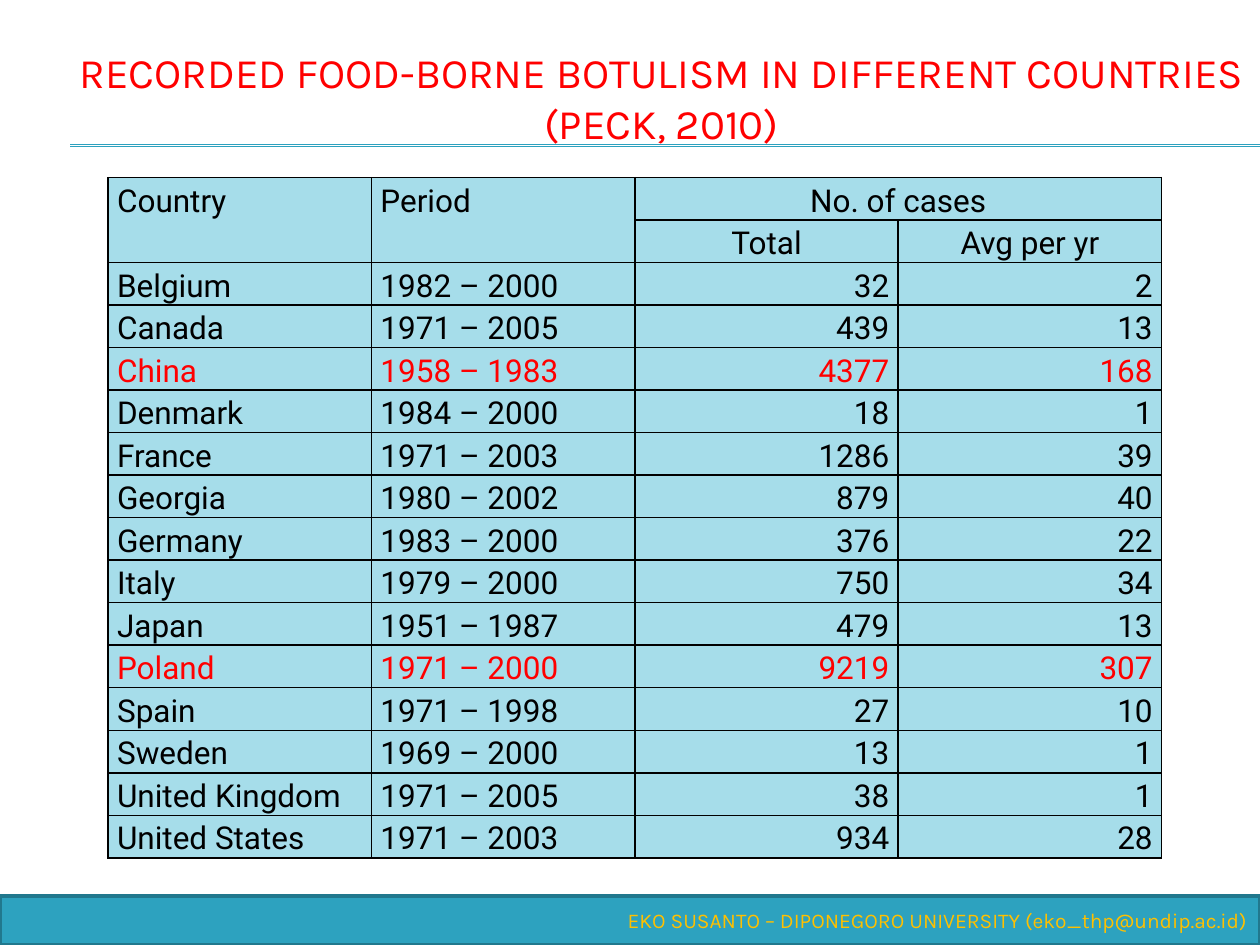
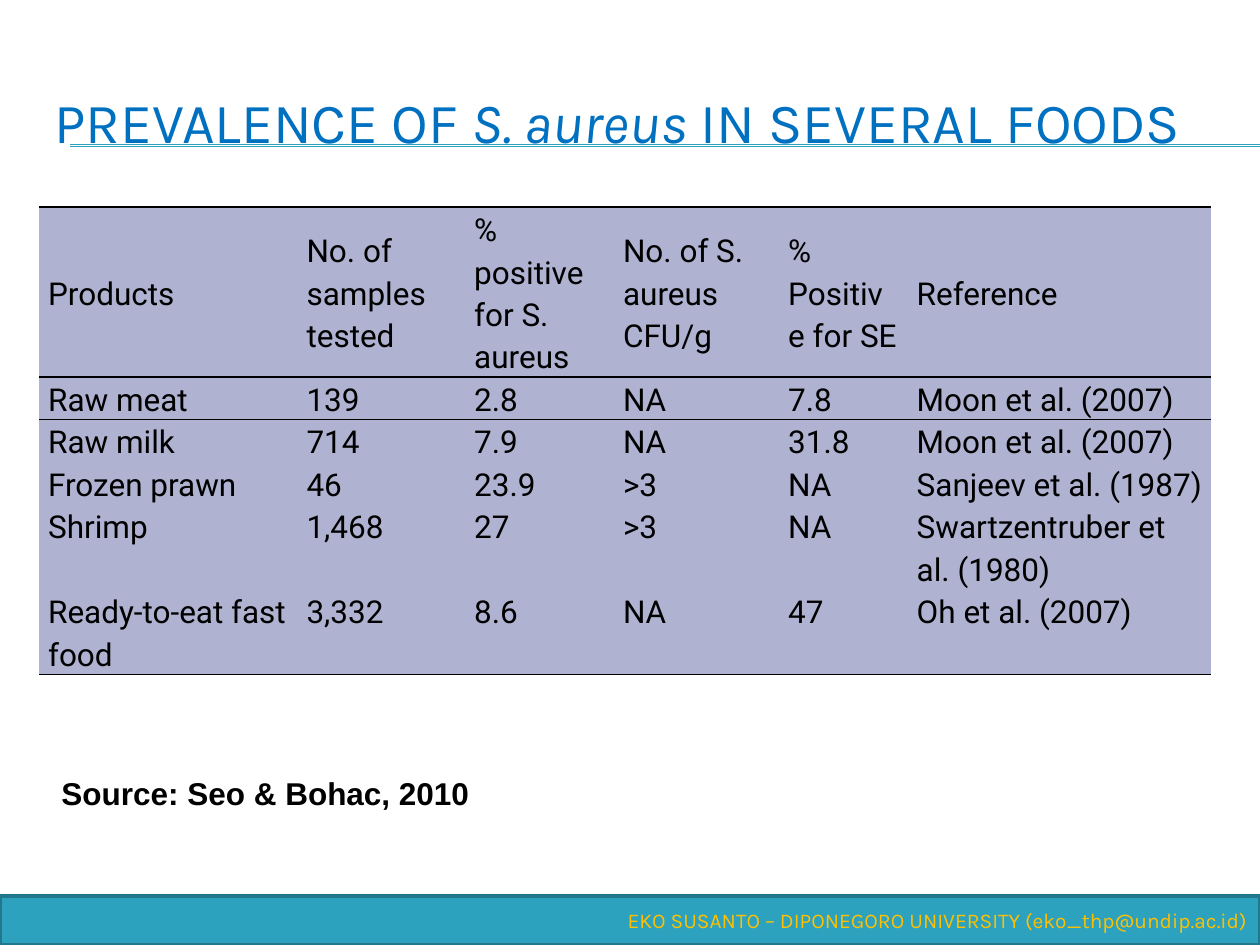
from lxml.etree import SubElement
from pptx import Presentation
from pptx.dml.color import RGBColor
from pptx.enum.shapes import MSO_CONNECTOR, MSO_SHAPE
from pptx.enum.text import MSO_ANCHOR as Anchor, MSO_AUTO_SIZE as AutoSize, PP_ALIGN as Align
from pptx.oxml.ns import qn
from pptx.util import Cm, Pt

BLACK = RGBColor(0x00, 0x00, 0x00)
RED = RGBColor(0xFF, 0x00, 0x00)
BLUE = RGBColor(0x00, 0x70, 0xC0)
GOLD = RGBColor(0xFF, 0xC0, 0x00)
TEAL = RGBColor(0x2D, 0xA2, 0xBF)
DARK_TEAL = RGBColor(0x21, 0x78, 0x8D)
PALE_TEAL = RGBColor(0xA6, 0xDD, 0xEA)
LAVENDER = RGBColor(0xAF, 0xB2, 0xD0)

TITLE_FONT, TABLE_FONT, SOURCE_FONT = "Karla", "Roboto", "Arial"
PLAIN_TABLE_STYLE = "{2D5ABB26-0587-4C30-8999-92F81FD0307C}"
LINE_HEIGHT = 0.85
FOOTER = "EKO SUSANTO – DIPONEGORO UNIVERSITY (eko_thp@undip.ac.id)"

BOTULISM_CASES = [
    ("Belgium", "1982 – 2000", "32", "2"),
    ("Canada", "1971 – 2005", "439", "13"),
    ("China", "1958 – 1983", "4377", "168"),
    ("Denmark", "1984 – 2000", "18", "1"),
    ("France", "1971 – 2003", "1286", "39"),
    ("Georgia", "1980 – 2002", "879", "40"),
    ("Germany", "1983 – 2000", "376", "22"),
    ("Italy", "1979 – 2000", "750", "34"),
    ("Japan", "1951 – 1987", "479", "13"),
    ("Poland", "1971 – 2000", "9219", "307"),
    ("Spain", "1971 – 1998", "27", "10"),
    ("Sweden", "1969 – 2000", "13", "1"),
    ("United Kingdom", "1971 – 2005", "38", "1"),
    ("United States", "1971 – 2003", "934", "28"),
]
HIGHLIGHTED = {"China", "Poland"}

AUREUS_ROWS = [
    ("Products", "No. of samples tested", "% positive for S. aureus",
     "No. of S. aureus CFU/g", "% Positive for SE", "Reference"),
    ("Raw meat", "139", "2.8", "NA", "7.8", "Moon et al. (2007)"),
    ("Raw milk", "714", "7.9", "NA", "31.8", "Moon et al. (2007)"),
    ("Frozen prawn", "46", "23.9", ">3", "NA", "Sanjeev et al. (1987)"),
    ("Shrimp", "1,468", "27", ">3", "NA", "Swartzentruber et al. (1980)"),
    ("Ready-to-eat fast food", "3,332", "8.6", "NA", "47", "Oh et al. (2007)"),
]


class DeckBuilder:
    def __init__(self):
        self.deck = Presentation()
        self.deck.slide_width, self.deck.slide_height = Cm(25.4), Cm(19.05)
        self.layout = self.deck.slide_layouts[5]
        self.page = None

    def add_page(self):
        self.page = self.deck.slides.add_slide(self.layout)

    def add_layout_rule(self, top):
        rule = self.page.shapes.add_connector(
            MSO_CONNECTOR.STRAIGHT, Cm(1.42), Cm(top), Cm(25.4), Cm(top))
        rule.line.color.rgb = TEAL
        rule.line.width = Pt(0.75)
        SubElement(rule._element.spPr, qn("a:effectLst"))
        self.layout.shapes._spTree.append(rule._element)

    def add_span(self, para, text, font, size, color, bold=False, italic=False):
        span = para.add_run()
        span.text = text
        span.font.name, span.font.size = font, Pt(size)
        span.font.bold, span.font.italic = bold, italic
        span.font.color.rgb = color

    def add_title(self, left, top, spans, size, color, align):
        title = self.page.shapes.title
        title.left, title.top, title.width, title.height = Cm(left), Cm(top), Cm(24.13), Cm(2.34)
        frame = title.text_frame
        frame.auto_size = AutoSize.NONE
        frame.vertical_anchor = Anchor.MIDDLE
        para = frame.paragraphs[0]
        para.alignment = align
        for text, italic in spans:
            self.add_span(para, text, TITLE_FONT, size, color, italic=italic)

    def add_table(self, left, top, column_widths, line_counts):
        heights = [LINE_HEIGHT * count for count in line_counts]
        frame = self.page.shapes.add_table(
            len(heights), len(column_widths), Cm(left), Cm(top),
            Cm(sum(column_widths)), Cm(sum(heights)))
        table = frame.table
        table.first_row = table.horz_banding = False
        table._tbl.tblPr.find(qn("a:tableStyleId")).text = PLAIN_TABLE_STYLE
        for column, width in zip(table.columns, column_widths):
            column.width = Cm(width)
        for row, height in zip(table.rows, heights):
            row.height = Cm(height)
        return table

    def format_cell(self, cell, fill, sides):
        cell.margin_left = cell.margin_right = Cm(0.18)
        cell.margin_top = cell.margin_bottom = 0
        properties = cell._tc.get_or_add_tcPr()
        for side in sides:
            border = SubElement(properties, qn(f"a:ln{side}"), w=str(Pt(1)))
            paint = SubElement(border, qn("a:solidFill"))
            SubElement(paint, qn("a:srgbClr"), val=str(BLACK))
        cell.fill.solid()
        cell.fill.fore_color.rgb = fill

    def write_cell(self, cell, text, align=Align.LEFT, color=BLACK, anchor=Anchor.TOP):
        cell.vertical_anchor = anchor
        para = cell.text_frame.paragraphs[0]
        para.alignment = align
        para.line_spacing = 1.15
        self.add_span(para, text, TABLE_FONT, 18, color)

    def add_source(self, text):
        box = self.page.shapes.add_textbox(Cm(0.99), Cm(15.47), Cm(8.81), Cm(1.02))
        frame = box.text_frame
        frame.word_wrap = False
        frame.auto_size = AutoSize.SHAPE_TO_FIT_TEXT
        self.add_span(frame.paragraphs[0], text, SOURCE_FONT, 18, BLACK, bold=True)

    def add_footer(self):
        band = self.page.shapes.add_shape(
            MSO_SHAPE.RECTANGLE, 0, Cm(18.06), Cm(25.4), Cm(0.99))
        band.shadow.inherit = False
        band.fill.solid()
        band.fill.fore_color.rgb = TEAL
        band.line.color.rgb = DARK_TEAL
        band.line.width = Pt(2)
        band.text_frame.vertical_anchor = Anchor.MIDDLE
        para = band.text_frame.paragraphs[0]
        para.alignment = Align.RIGHT
        self.add_span(para, FOOTER, TITLE_FONT, 12, GOLD)


def build_botulism_page(builder):
    builder.add_page()
    for top in (2.92, 2.95):
        builder.add_layout_rule(top)
    heading = "RECORDED FOOD-BORNE BOTULISM IN DIFFERENT COUNTRIES (PECK, 2010)"
    builder.add_title(1.27, 0.79, [(heading, False)], 24, RED, Align.CENTER)
    table = builder.add_table(2.18, 3.58, [5.31] * 4, [1] * (len(BOTULISM_CASES) + 2))
    for cell in table.iter_cells():
        builder.format_cell(cell, PALE_TEAL, "LRTB")
    for column in (0, 1):
        table.cell(0, column).merge(table.cell(1, column))
    table.cell(0, 2).merge(table.cell(0, 3))
    builder.write_cell(table.cell(0, 0), "Country")
    builder.write_cell(table.cell(0, 1), "Period")
    builder.write_cell(table.cell(0, 2), "No. of cases", Align.CENTER)
    builder.write_cell(table.cell(1, 2), "Total", Align.CENTER)
    builder.write_cell(table.cell(1, 3), "Avg per yr", Align.CENTER)
    for row, record in enumerate(BOTULISM_CASES, start=2):
        color = RED if record[0] in HIGHLIGHTED else BLACK
        for column, text in enumerate(record):
            align = Align.RIGHT if column > 1 else Align.LEFT
            builder.write_cell(table.cell(row, column), text, align, color)
    builder.add_footer()


def build_aureus_page(builder):
    builder.add_page()
    spans = [("PREVALENCE OF ", False), ("S. aureus", True), (" IN SEVERAL FOODS", False)]
    builder.add_title(0.84, 1.27, spans, 32.4, BLUE, Align.LEFT)
    table = builder.add_table(
        0.79, 4.17, [5.21, 3.38, 3, 3.33, 2.59, 6.12], [4, 1, 1, 1, 2, 2])
    borders = {0: "TB", 1: "T", len(AUREUS_ROWS) - 1: "B"}
    for row, record in enumerate(AUREUS_ROWS):
        anchor = Anchor.TOP if row else Anchor.MIDDLE
        for column, text in enumerate(record):
            cell = table.cell(row, column)
            builder.format_cell(cell, LAVENDER, borders.get(row, ""))
            builder.write_cell(cell, text, anchor=anchor)
    builder.add_source("Source: Seo & Bohac, 2010")
    builder.add_footer()


def main():
    builder = DeckBuilder()
    build_botulism_page(builder)
    build_aureus_page(builder)
    builder.deck.save("out.pptx")


if __name__ == "__main__":
    main()
